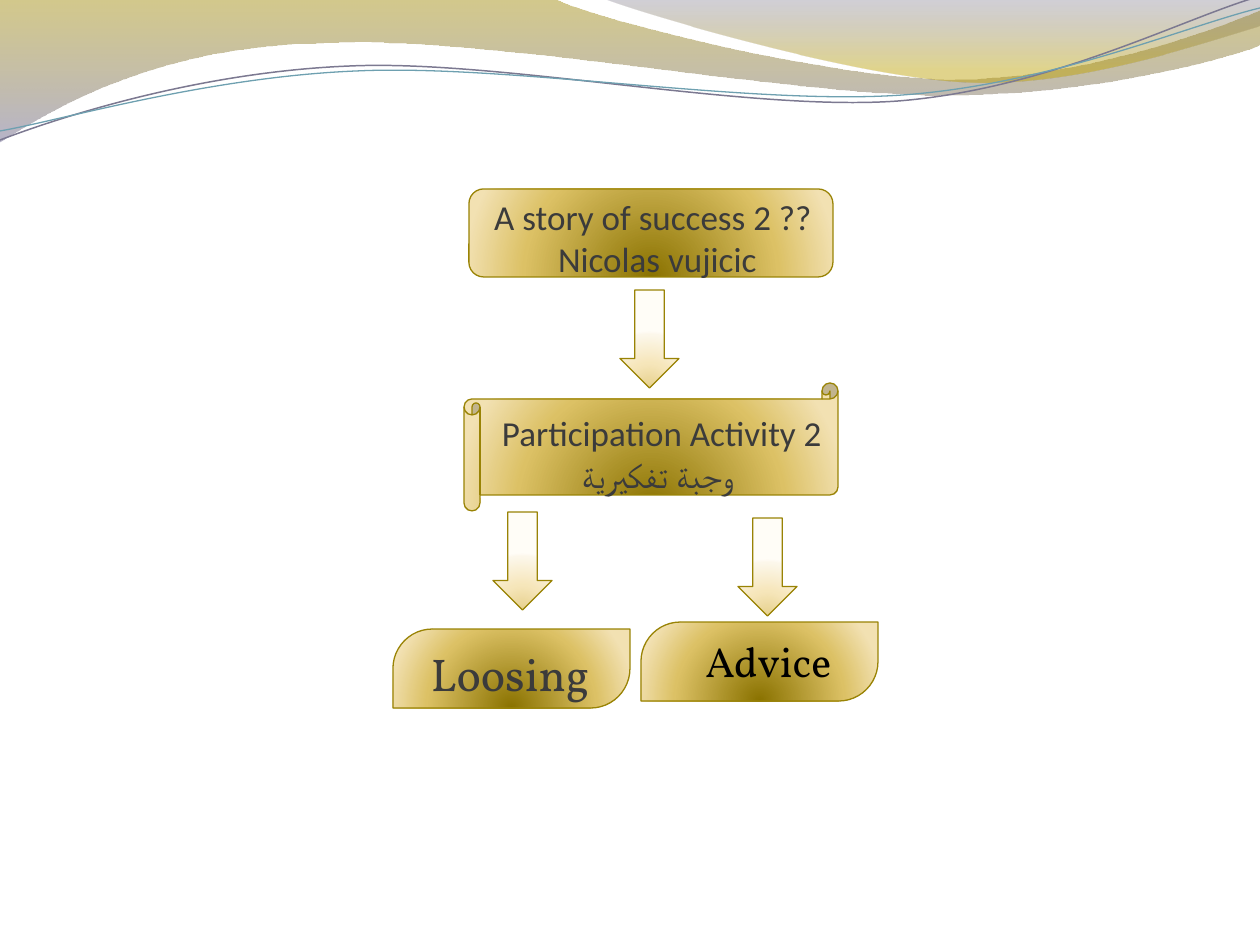
from lxml import etree
from pptx import Presentation
from pptx.dml.color import RGBColor
from pptx.enum.shapes import MSO_SHAPE as Preset
from pptx.enum.text import MSO_ANCHOR as Anchor, MSO_AUTO_SIZE as AutoSize, PP_ALIGN as Align
from pptx.oxml import parse_xml
from pptx.oxml.ns import nsdecls, qn
from pptx.util import Pt

PX = 914400 / 126  # EMU per px


def px(*lengths):
    return [round(length * PX) for length in lengths]


THEME = {
    # gradient stops: position %, colour, opacity %
    "gold": [(0, "8A7200", 100), (68, "DCC165", 100), (100, "F2E1B2", 100)],
    "cream": [(0, "E7D18D", 100), (43, "F6E6BA", 100), (93, "FCF7EA", 100), (100, "FFFDF7", 100)],
    "wide wave": [(0, "9E8700", 45), (100, "7B769C", 55)],
    "corner wave": [(0, "66627C", 30), (80, "BDA100", 45)],
    "edge": "998305", "mauve": "7C7991", "teal": "6EA0B0",
    "text": "3B3B3B", "black": "000000",
    "sans": "Calibri", "serif": "Vollkorn",
    "body size": 20, "advice size": 24, "loosing size": 26.2,
}
GLOW = '<a:path path="circle"><a:fillToRect l="50000" t="130000" r="50000" b="-30000"/></a:path>'
DOWNWARD = '<a:lin ang="5400000" scaled="0"/>'

deck = Presentation()
deck.slide_width, deck.slide_height = px(1260, 945)
page = deck.slides.add_slide(deck.slide_layouts[6])


def paint(shape, stops=None, direction=GLOW, line=None, width=0.75):
    """Give a shape a gradient or no fill, an outline or none, and no shadow."""
    shape.shadow.inherit = False
    shape.fill.background()
    if stops:
        marks = "".join(
            f'<a:gs pos="{at * 1000}"><a:srgbClr val="{colour}">'
            f'<a:alpha val="{opacity * 1000}"/></a:srgbClr></a:gs>'
            for at, colour, opacity in stops)
        props = shape.element.spPr
        props.replace(props.find(qn("a:noFill")), parse_xml(
            f'<a:gradFill {nsdecls("a")} rotWithShape="1">'
            f'<a:gsLst>{marks}</a:gsLst>{direction}</a:gradFill>'))
    if line:
        shape.line.color.rgb = RGBColor.from_string(line)
        shape.line.width = Pt(width)
    else:
        shape.line.fill.background()


def add_text(text, place, size, font=THEME["sans"], color=THEME["text"], align=Align.CENTER,
             anchor=Anchor.BOTTOM, insets=(0, 6, 0, 0), spacing=None, rtl=True, grow=False):
    box = page.shapes.add_textbox(*px(*place))
    frame = box.text_frame
    frame.word_wrap = True
    frame.auto_size = AutoSize.SHAPE_TO_FIT_TEXT if grow else AutoSize.NONE
    frame.vertical_anchor = anchor
    (frame.margin_left, frame.margin_top,
     frame.margin_right, frame.margin_bottom) = px(*insets)
    frame.text = text  # a vertical tab becomes a line break
    para = frame.paragraphs[0]
    para.alignment = align
    para.line_spacing = spacing
    if rtl:
        para._p.get_or_add_pPr().set("rtl", "1")
    for span in para.runs:
        span.font.size = Pt(size)
        span.font.name = font
        span.font.color.rgb = RGBColor.from_string(color)


# Waves along the top: a start, then steps of one point (line) or three (curve)
waves = [
    ((0, 0), [
        [(554, -1)],
        [(600, 21), (837, 79), (955, 79)], [(1075, 79), (1207, 33), (1260, 11)],
        [(1261, 45)],
        [(1239, 55), (1096, 96), (940, 95)], [(784, 95), (481, 35), (324, 43)],
        [(163, 45), (58, 105), (-1, 142)],
    ], {"stops": THEME["wide wave"], "direction": DOWNWARD}),
    ((604, -1), [
        [(641, 14), (859, 78), (969, 82)], [(1079, 87), (1211, 40), (1260, 26)],
        [(1260, 0)],
    ], {"stops": THEME["corner wave"], "direction": DOWNWARD}),
    ((0, 140), [
        [(60, 117), (199, 72), (349, 66)], [(498, 59), (747, 112), (898, 101)],
        [(1049, 89), (1182, 19), (1257, -3)],
    ], {"line": THEME["mauve"], "width": 0.85}),
    ((0, 131), [
        [(59, 121), (207, 77), (357, 71)], [(508, 64), (752, 106), (903, 95)],
        [(1053, 84), (1186, 26), (1260, 8)],
    ], {"line": THEME["teal"]}),
]
for start, steps, style in waves:
    builder = page.shapes.build_freeform(*start, scale=PX)
    builder.add_line_segments([point for step in steps for point in step], close="stops" in style)
    wave = builder.convert_to_shape()
    segments = iter(list(wave.element.iter(qn("a:lnTo"))))
    for step in steps:
        parts = [next(segments) for _ in step]
        if len(parts) == 3:
            curve = etree.Element(qn("a:cubicBezTo"))
            parts[0].addprevious(curve)
            for part in parts:
                curve.append(part[0])
                part.getparent().remove(part)
    paint(wave, **style)

# Flow chart shapes
flow = [
    (Preset.ROUNDED_RECTANGLE, (469, 189, 364, 88), "gold"),
    (Preset.HORIZONTAL_SCROLL, (464, 383, 374, 128), "gold"),
]
flow += [(Preset.DOWN_ARROW, (left, top, 59, 98), "cream")
         for left, top in ((620, 290), (493, 512), (738, 518))]
flow += [(Preset.ROUND_2_DIAG_RECTANGLE, (left, top, 237, 79), "gold")
         for left, top in ((393, 629), (641, 622))]
for preset, place, fill in flow:
    shape = page.shapes.add_shape(preset, *px(*place))
    if preset == Preset.ROUND_2_DIAG_RECTANGLE:
        shape.adjustments[0], shape.adjustments[1] = 0.5, 0
    paint(shape, THEME[fill], line=THEME["edge"])

# Labels
add_text("A story of success 2 ??\vNicolas vujicic ", (469, 168, 368, 112), THEME["body size"])
add_text("Participation Activity 2 \vوجبة تفكيرية", (451, 373, 413, 123), THEME["body size"])
add_text("Loosing", (431, 638, 173, 62), THEME["loosing size"], font=THEME["serif"],
         align=Align.LEFT, spacing=0.8, rtl=False)
add_text("Advice ", (670, 630, 186, 63), THEME["advice size"], font=THEME["serif"],
         color=THEME["black"], anchor=Anchor.TOP, insets=(13, 6, 13, 6), grow=True)

deck.save("out.pptx")
